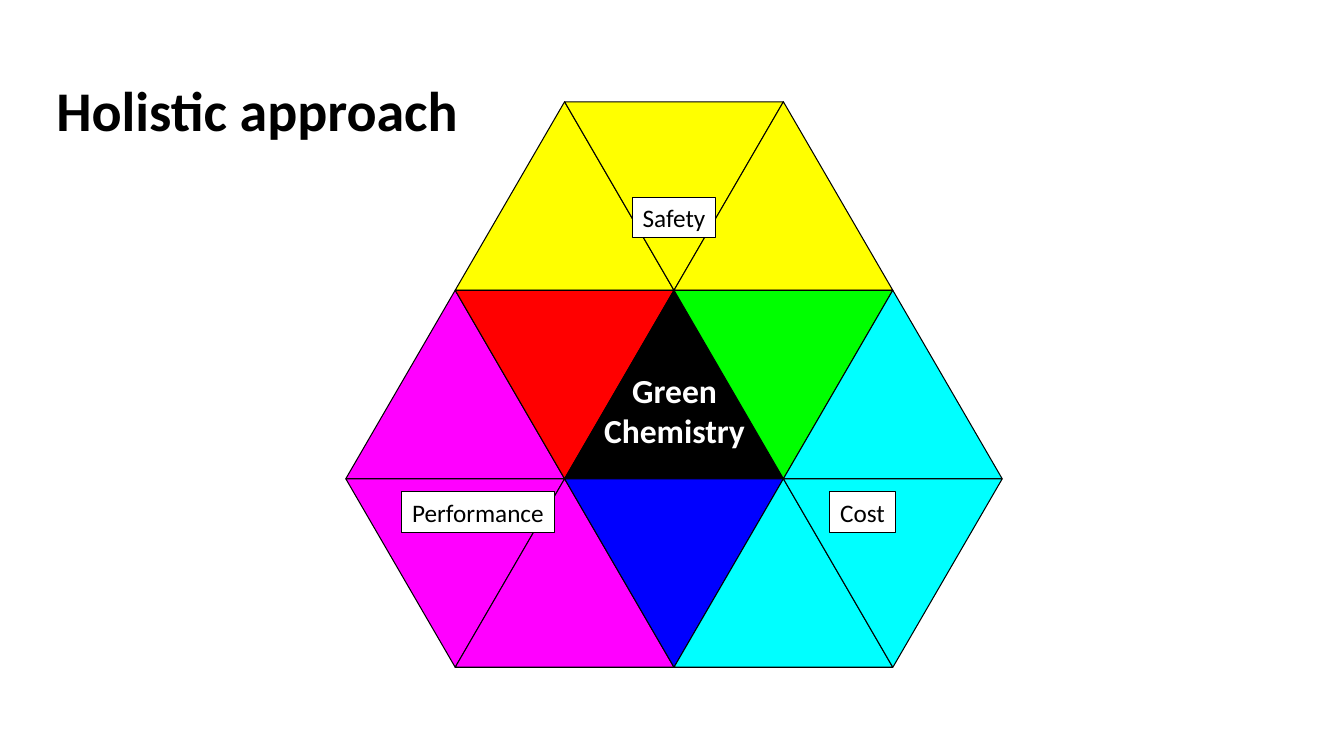
from pptx import Presentation
from pptx.dml.color import RGBColor
from pptx.enum.shapes import MSO_SHAPE
from pptx.enum.text import MSO_ANCHOR, PP_ALIGN
from pptx.util import Inches, Pt

COLORS = {
    "black": "000000", "white": "FFFFFF", "red": "FF0000", "green": "00FF00",
    "blue": "0000FF", "safety": "FFFF00", "performance": "FF00FF", "cost": "00FFFF",
}
# Colour of each triangle, by row; None leaves the place empty.
MOSAIC = [
    [None, "safety", "safety", "safety", None],
    ["performance", "red", "black", "green", "cost"],
    ["performance", "performance", "blue", "cost", "cost"],
]
MOSAIC_LEFT, MOSAIC_TOP = 3.43, 1.01
SIDE, HEIGHT = 2.17, 1.87
LABELS = [
    ("Safety", 6.27, 1.96, 0.83),
    ("Performance", 3.98, 4.88, 1.52),
    ("Cost", 8.23, 4.88, 0.65),
]
LABEL_HEIGHT = 0.4
LABEL_FONT = {"name": "Calibri", "size": Pt(18), "bold": False}
CENTRE_FONT = {"name": "Calibri", "size": Pt(24), "bold": True}
TITLE_FONT = {"name": "Calibri", "size": Pt(40), "bold": True}


def rgb(color):
    return RGBColor.from_string(COLORS[color])


def add_outlined(slide, kind, left, top, width, height, color):
    outlined = slide.shapes.add_shape(
        kind, Inches(left), Inches(top), Inches(width), Inches(height))
    outlined.shadow.inherit = False
    outlined.fill.solid()
    outlined.fill.fore_color.rgb = rgb(color)
    outlined.line.color.rgb = rgb("black")
    outlined.line.width = Pt(0.75)
    return outlined


def write(frame, lines, font, color, align, wrap=False, spacing=1.0):
    frame.word_wrap = wrap
    frame.vertical_anchor = MSO_ANCHOR.MIDDLE
    for index, line in enumerate(lines):
        paragraph = frame.add_paragraph() if index else frame.paragraphs[0]
        paragraph.alignment = align
        paragraph.line_spacing = spacing
        run = paragraph.add_run()
        run.text = line
        for attribute, value in font.items():
            setattr(run.font, attribute, value)
        run.font.color.rgb = rgb(color)


def add_mosaic(slide):
    """Interlock the triangles: each column moves half a side and turns over."""
    for row, colors in enumerate(MOSAIC):
        for column, color in enumerate(colors):
            if color is None:
                continue
            triangle = add_outlined(
                slide, MSO_SHAPE.ISOSCELES_TRIANGLE,
                MOSAIC_LEFT + column * SIDE / 2, MOSAIC_TOP + row * HEIGHT,
                SIDE, HEIGHT, color)
            points_up = (row + column) % 2 == 1
            triangle.rotation = 0 if points_up else 180


def add_label(slide, wording, left, top, width):
    label = add_outlined(
        slide, MSO_SHAPE.RECTANGLE, left, top, width, LABEL_HEIGHT, "white")
    write(label.text_frame, [wording], LABEL_FONT, "black", PP_ALIGN.CENTER)


def add_text(slide, left, top, width, height, *args, **options):
    box = slide.shapes.add_textbox(
        Inches(left), Inches(top), Inches(width), Inches(height))
    write(box.text_frame, *args, **options)


def main():
    deck = Presentation()
    deck.slide_width, deck.slide_height = Inches(13.33), Inches(7.5)
    slide = deck.slides.add_slide(deck.slide_layouts[6])
    add_mosaic(slide)
    for label in LABELS:
        add_label(slide, *label)
    add_text(slide, 5.88, 3.61, 1.62, 0.91,
             ["Green", "Chemistry"], CENTRE_FONT, "white", PP_ALIGN.CENTER)
    add_text(slide, 0.46, 0.77, 4.31, 0.71,
             ["Holistic approach"], TITLE_FONT, "black", PP_ALIGN.LEFT,
             wrap=True, spacing=0.9)
    deck.save("out.pptx")


if __name__ == "__main__":
    main()
